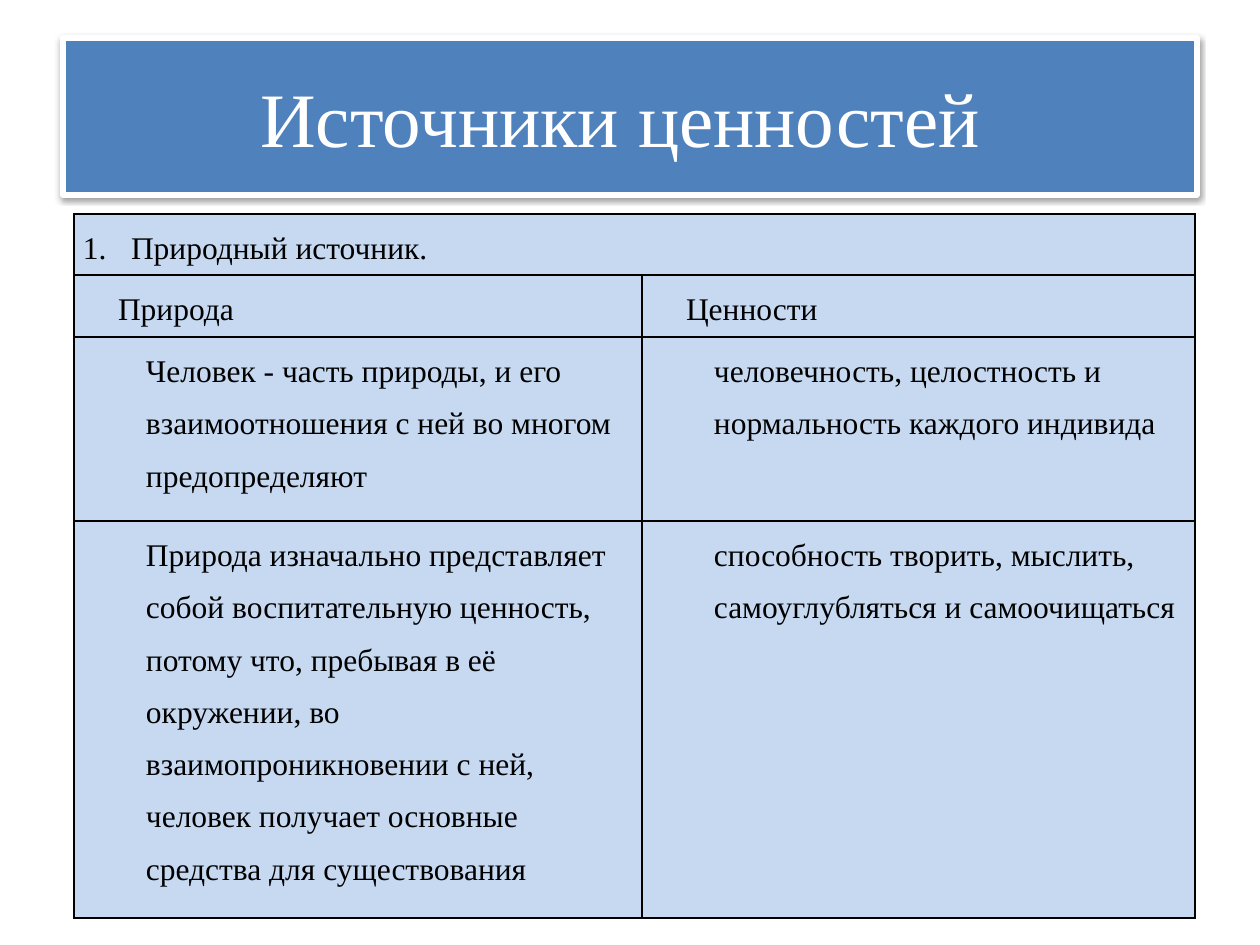
import pptx
import pptx.dml.color
import pptx.enum.shapes
import pptx.enum.text
import pptx.oxml
import pptx.oxml.ns
import pptx.util
from dataclasses import dataclass

EMU_PER_PX = 914400 / 126


def px(length):
    return pptx.util.Emu(round(length * EMU_PER_PX))


@dataclass(frozen=True)
class Theme:
    font: str = "Times New Roman"
    title_size: int = 44
    body_size: int = 18
    banner: str = "4F81BD"
    cell: str = "C6D9F1"
    light: str = "FFFFFF"
    dark: str = "000000"


@dataclass(frozen=True)
class Entry:
    text: str
    indent: int
    numbered: bool = False


class SlideBuilder:
    def __init__(self, slide, theme):
        self.slide = slide
        self.theme = theme

    def rgb(self, value):
        return pptx.dml.color.RGBColor.from_string(value)

    def xml(self, tag, attributes="", content=""):
        namespace = pptx.oxml.ns.nsdecls("a")
        return pptx.oxml.parse_xml(
            f"<a:{tag} {namespace} {attributes}>{content}</a:{tag}>")

    def style_text(self, paragraph, size, color):
        for run in paragraph.runs:
            run.font.name = self.theme.font
            run.font.size = pptx.util.Pt(size)
            run.font.color.rgb = self.rgb(color)

    def banner(self, text, left, top, width, height):
        banner = self.slide.shapes.add_shape(
            pptx.enum.shapes.MSO_SHAPE.RECTANGLE,
            px(left), px(top), px(width), px(height))
        banner.fill.solid()
        banner.fill.fore_color.rgb = self.rgb(self.theme.banner)
        banner.line.color.rgb = self.rgb(self.theme.light)
        banner.line.width = pptx.util.Pt(3)

        # Soft shadow straight below
        banner.shadow.inherit = False
        effects = banner._element.spPr.find(pptx.oxml.ns.qn("a:effectLst"))
        effects.append(self.xml(
            "outerShdw",
            'blurRad="40000" dist="20000" dir="5400000" rotWithShape="0"',
            f'<a:srgbClr val="{self.theme.dark}"><a:alpha val="38000"/></a:srgbClr>'))

        frame = banner.text_frame
        frame.text = text
        frame.word_wrap = True
        frame.vertical_anchor = pptx.enum.text.MSO_ANCHOR.MIDDLE
        heading = frame.paragraphs[0]
        heading.alignment = pptx.enum.text.PP_ALIGN.CENTER
        self.style_text(heading, self.theme.title_size, self.theme.light)

    def style_cell(self, cell):
        cell.fill.solid()
        cell.fill.fore_color.rgb = self.rgb(self.theme.cell)
        cell.margin_left = cell.margin_right = px(9)
        cell.margin_top = cell.margin_bottom = 0
        properties = cell._tc.get_or_add_tcPr()
        for position, side in enumerate(("lnL", "lnR", "lnT", "lnB")):
            properties.insert(position, self.xml(
                side, 'w="12700"',
                f'<a:solidFill><a:srgbClr val="{self.theme.dark}"/></a:solidFill>'))

    def fill_cell(self, cell, entry):
        cell.text_frame.text = entry.text
        paragraph = cell.text_frame.paragraphs[0]
        paragraph.line_spacing = 1.5
        properties = paragraph._p.get_or_add_pPr()
        properties.set("marL", str(px(entry.indent)))
        properties.set("indent", str(px(-entry.indent if entry.numbered else 0)))
        if entry.numbered:
            properties.append(self.xml("buAutoNum", 'type="arabicPeriod"'))
        self.style_text(paragraph, self.theme.body_size, self.theme.dark)

    def table(self, entries, left, top, widths, heights):
        table = self.slide.shapes.add_table(
            len(heights), len(widths), px(left), px(top),
            px(sum(widths)), px(sum(heights))).table
        for column, width in zip(table.columns, widths):
            column.width = px(width)
        for row, height in zip(table.rows, heights):
            row.height = px(height)
        for cell in table.iter_cells():
            self.style_cell(cell)
        for row_index, row_entries in enumerate(entries):
            for column_index, entry in enumerate(row_entries):
                self.fill_cell(table.cell(row_index, column_index), entry)
            # A lone entry spans the whole row
            if len(row_entries) == 1:
                table.cell(row_index, 0).merge(
                    table.cell(row_index, len(widths) - 1))


SOURCES = [
    [Entry("Природный источник.", 48, numbered=True)],
    [Entry("Природа", 35), Entry("Ценности", 35)],
    [Entry("Человек - часть природы, и его взаимоотношения с ней "
           "во многом предопределяют", 63),
     Entry("человечность, целостность и нормальность каждого индивида", 63)],
    [Entry("Природа изначально представляет собой воспитательную ценность, "
           "потому что, пребывая в её окружении, во взаимопроникновении с ней, "
           "человек получает основные средства для существования", 63),
     Entry("способность творить, мыслить, самоуглубляться и самоочищаться", 63)],
]


def main():
    presentation = pptx.Presentation()
    presentation.slide_width = px(1260)
    presentation.slide_height = px(945)
    slide = presentation.slides.add_slide(presentation.slide_layouts[6])
    builder = SlideBuilder(slide, Theme())

    # Title banner
    builder.banner("Источники ценностей ", 63, 38, 1134, 157)

    # Sources and their values
    builder.table(SOURCES, 74, 214, widths=(568, 553), heights=(61, 62, 184, 397))

    presentation.save("out.pptx")


if __name__ == "__main__":
    main()
